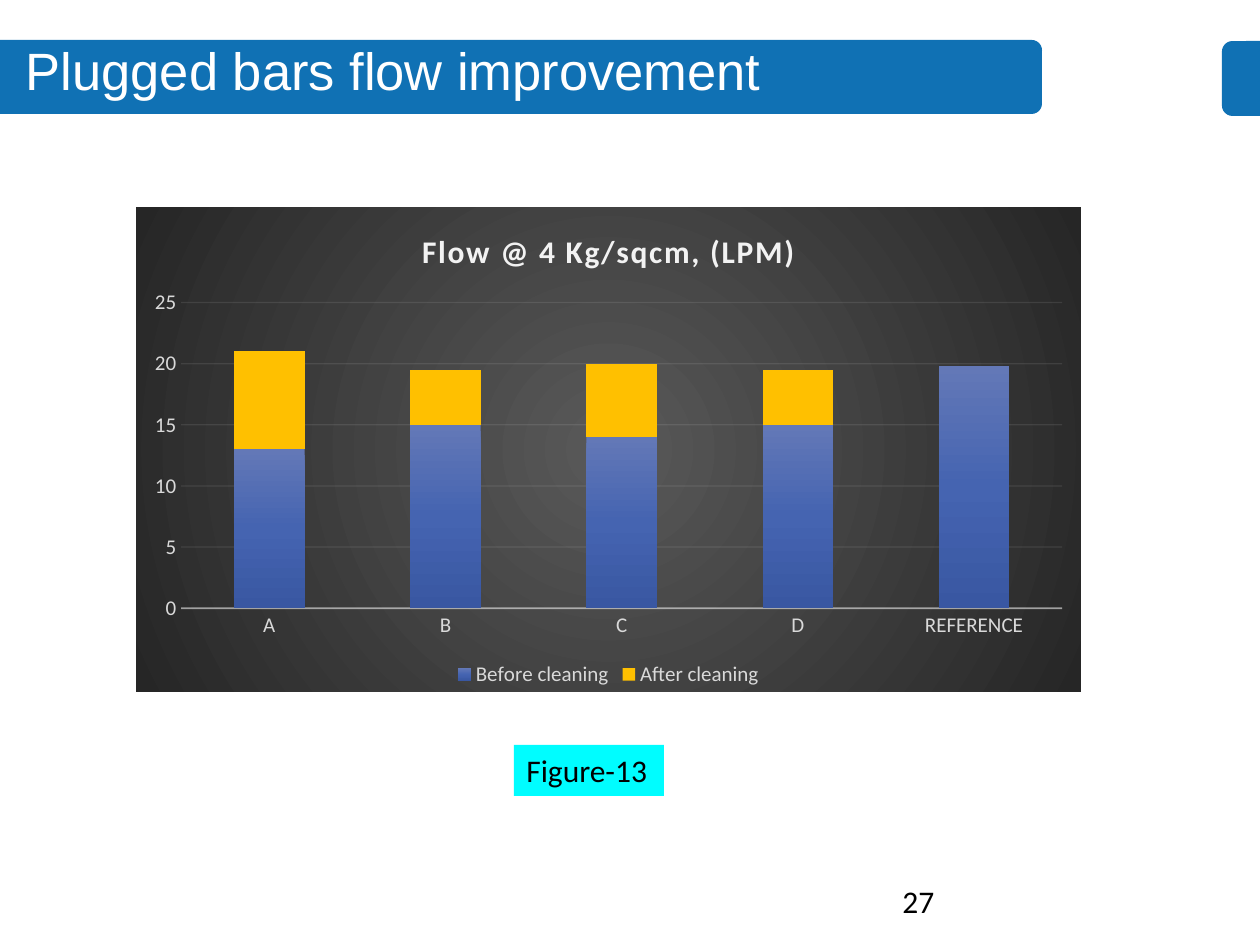
from lxml import etree
from pptx import Presentation
from pptx.chart.data import CategoryChartData
from pptx.dml.color import RGBColor
from pptx.enum.chart import XL_CHART_TYPE, XL_LEGEND_POSITION, XL_TICK_MARK
from pptx.enum.shapes import MSO_SHAPE
from pptx.enum.text import MSO_ANCHOR, PP_ALIGN
from pptx.oxml import parse_xml
from pptx.oxml.ns import nsdecls, qn
from pptx.util import Pt

STACKED = XL_CHART_TYPE.COLUMN_STACKED
BOTTOM = XL_LEGEND_POSITION.BOTTOM
NO_TICK = XL_TICK_MARK.NONE
ROUND = MSO_SHAPE.ROUND_2_SAME_RECTANGLE
TOP = MSO_ANCHOR.TOP
LEFT, CENTER = PP_ALIGN.LEFT, PP_ALIGN.CENTER

PX = 914400 // 126
BLUE, CYAN, WHITE, BLACK = "1071B4", "00FDFF", "FFFFFF", "000000"
PALE, GREY, GOLD = "F2F2F2", "D9D9D9", "FFC000"

BARS = [((0, 40, 1042, 74), 90), ((1222, 41, 38, 75), 270)]
TEXTS = [
    ("Plugged bars flow improvement", (10, 32, 767, 77),
     dict(size=30, font="Arial", color=WHITE, align=CENTER, wrap=False)),
    ("27", (890, 876, 283, 50), dict()),
    ("Figure-13", (514, 745, 150, 51), dict(fill=CYAN, wrap=False)),
]
TITLE = "Flow @ 4 Kg/sqcm, (LPM)"
CATS = ["A", "B", "C", "D", "REFERENCE"]
SERIES = [
    ("Before cleaning", [13, 15, 14, 15, 19.8]),
    ("After cleaning", [8, 4.5, 6, 4.5, None]),
]
BOX = (136, 207, 945, 485)
GLOW = [(0, "595959"), (100, "262626")]
SHADE = [(0, "6378B7"), (50, "4564B1"), (100, "3957A2")]
RADIAL = ('<a:path path="circle"><a:fillToRect l="50000" t="50000" '
          'r="50000" b="50000"/></a:path>')
LINEAR = '<a:lin ang="5400000" scaled="0"/>'


def rgb(code):
    return RGBColor.from_string(code)


def place(box):
    return [n * PX for n in box]


def style(font, size, color, name="Calibri", bold=False):
    font.size, font.name, font.bold = Pt(size), name, bold
    font.color.rgb = rgb(color)


def add_text(slide, text, box, size=18, font="Calibri", color=BLACK,
             align=LEFT, fill=None, wrap=True):
    shape = slide.shapes.add_textbox(*place(box))
    if fill:
        shape.fill.solid()
        shape.fill.fore_color.rgb = rgb(fill)
    frame = shape.text_frame
    frame.word_wrap, frame.vertical_anchor = wrap, TOP
    para = frame.paragraphs[0]
    para.alignment = align
    run = para.add_run()
    run.text = text
    style(run.font, size, color, font)


def add_bar(slide, box, turn):
    x, y, w, h = box
    left, top = x + (w - h) / 2, y + (h - w) / 2
    bar = slide.shapes.add_shape(
        ROUND, *[int(n * PX) for n in (left, top, h, w)])
    bar.rotation = turn
    bar.adjustments[0] = 0.14 if w > h else 0.28
    bar.shadow.inherit = False
    bar.fill.solid()
    bar.fill.fore_color.rgb = rgb(BLUE)
    bar.line.fill.background()


def blend(stops, path):
    marks = "".join(
        f'<a:gs pos="{at * 1000}"><a:srgbClr val="{code}"/></a:gs>'
        for at, code in stops)
    return (f'<a:gradFill {nsdecls("a")} rotWithShape="1">'
            f'<a:gsLst>{marks}</a:gsLst>{path}</a:gradFill>')


def rule(line, width, alpha):
    line.width = Pt(width)
    line.color.rgb = rgb(PALE)
    tint = line._get_or_add_ln().find(".//" + qn("a:srgbClr"))
    etree.SubElement(tint, qn("a:alpha")).set("val", str(alpha * 1000))


def add_chart(slide):
    data = CategoryChartData()
    data.categories = CATS
    for name, vals in SERIES:
        data.add_series(name, vals)
    chart = slide.shapes.add_chart(STACKED, *place(BOX), data).chart
    style(chart.font, 10, BLACK)

    chart.has_title = True
    para = chart.chart_title.text_frame.paragraphs[0]
    run = para.add_run()
    run.text = TITLE
    style(run.font, 18, PALE, bold=True)
    run._r.get_or_add_rPr().set("spc", "100")
    chart.chart_title.include_in_layout = False

    chart.has_legend = True
    chart.legend.position = BOTTOM
    chart.legend.include_in_layout = False
    style(chart.legend.font, 12, GREY)

    cat, val = chart.category_axis, chart.value_axis
    for axis in (cat, val):
        axis.major_tick_mark = axis.minor_tick_mark = NO_TICK
        style(axis.tick_labels.font, 12, GREY)
    rule(cat.format.line, 1, 54)
    val.format.line.fill.background()
    rule(val.major_gridlines.format.line, 0.75, 10)
    val.minimum_scale, val.maximum_scale, val.major_unit = 0, 25, 5

    plot = chart.plots[0]
    plot.gap_width, plot.overlap = 150, 100
    plot.vary_by_categories = False
    before, after = plot.series
    after.format.fill.solid()
    after.format.fill.fore_color.rgb = rgb(GOLD)
    before._element.get_or_add_spPr().insert(
        0, parse_xml(blend(SHADE, LINEAR)))

    space = chart._chartSpace
    space.find(qn("c:chart")).addnext(parse_xml(
        f'<c:spPr {nsdecls("c", "a")}>{blend(GLOW, RADIAL)}'
        '<a:ln><a:noFill/></a:ln></c:spPr>'))


def main():
    deck = Presentation()
    deck.slide_width, deck.slide_height = 1260 * PX, 945 * PX
    slide = deck.slides.add_slide(deck.slide_layouts[6])
    for box, turn in BARS:
        add_bar(slide, box, turn)
    for text, box, form in TEXTS:
        add_text(slide, text, box, **form)
    add_chart(slide)
    deck.save("out.pptx")


if __name__ == "__main__":
    main()
